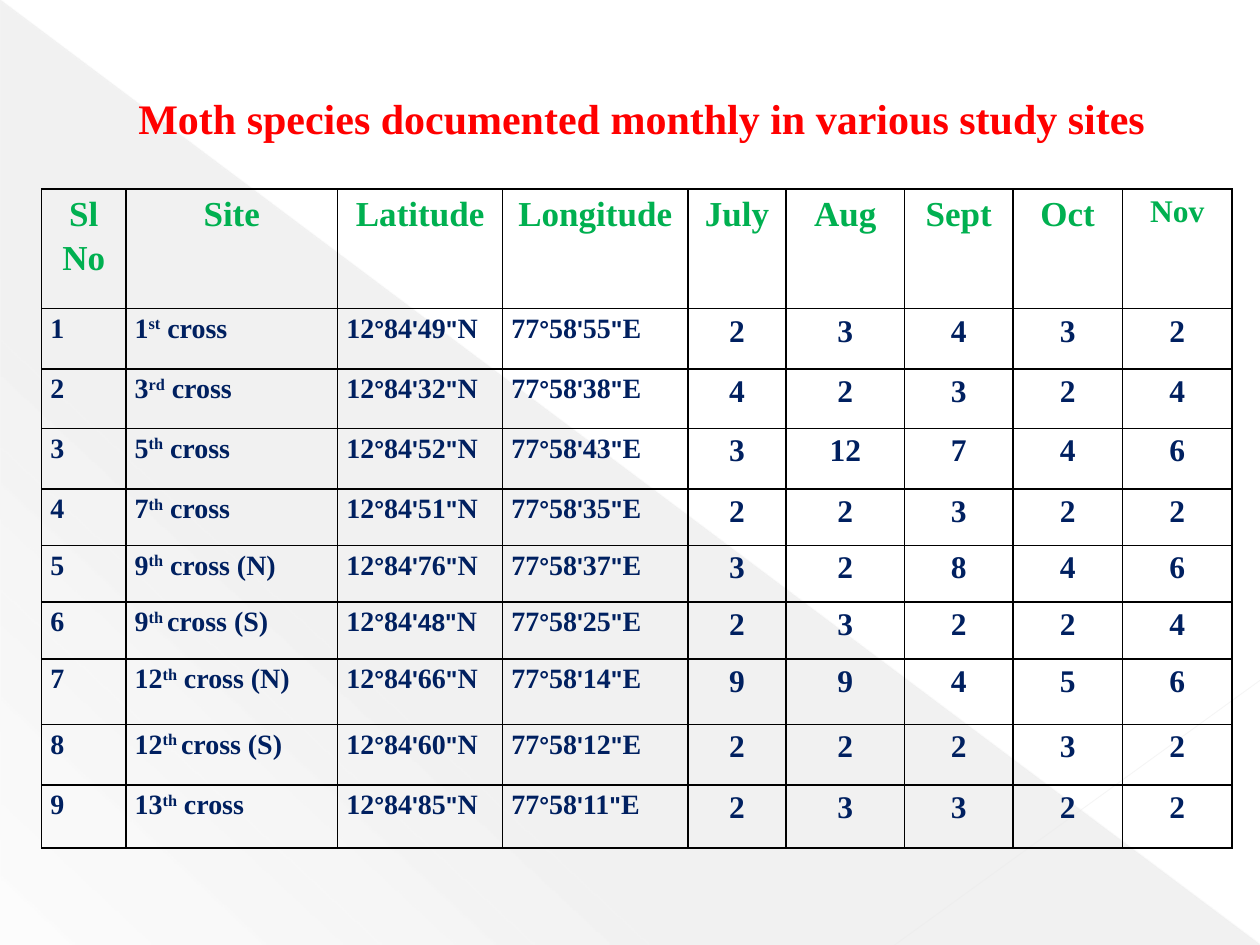
from lxml.etree import SubElement
from pptx import Presentation
from pptx.dml.color import RGBColor
from pptx.enum.shapes import MSO_CONNECTOR as Connector, MSO_SHAPE as Shape
from pptx.enum.text import MSO_ANCHOR as Anchor, MSO_AUTO_SIZE as AutoSize, PP_ALIGN as Align
from pptx.oxml import parse_xml
from pptx.oxml.ns import nsdecls, qn
from pptx.util import Inches, Pt

WIDTH, HEIGHT = 10, 7.5
COLORS = {"title": "FF0000", "header": "00B050", "body": "002060", "border": "000000",
          "shade": "666666", "diagonal": "E8E8E8", "corner": "EAEAEA"}
SERIF, SANS = "Times New Roman", "Arial"
COLUMNS = [0.67, 1.68, 1.31, 1.47, 0.78, 0.94, 0.86, 0.87, 0.87]
ROWS = [0.95, 0.48, 0.47, 0.48, 0.45, 0.45, 0.45, 0.52, 0.48, 0.5]
HEADERS = ["Sl No", "Site", "Latitude", "Longitude", "July", "Aug", "Sept", "Oct", "Nov"]


def seconds(value):
    """Split the seconds of a coordinate into mark, number and mark."""
    return "'", value, '"'


SITES = [
    (("1", "st", " cross"), seconds("49"), seconds("55"), [2, 3, 4, 3, 2]),
    (("3", "rd", " cross"), seconds("32"), seconds("38"), [4, 2, 3, 2, 4]),
    (("5", "th", " cross"), seconds("52"), seconds("43"), [3, 12, 7, 4, 6]),
    (("7", "th", " cross"), seconds("51"), seconds("35"), [2, 2, 3, 2, 2]),
    (("9", "th", " cross (N)"), seconds("76"), seconds("37"), [3, 2, 8, 4, 6]),
    (("9", "th ", "cross (S)"), ("'48\"",), seconds("25"), [2, 3, 2, 2, 4]),
    (("12", "th", " cross (N)"), seconds("66"), seconds("14"), [9, 9, 4, 5, 6]),
    (("12", "th ", "cross (S)"), seconds("60"), seconds("12"), [2, 2, 2, 3, 2]),
    (("13", "th", " cross"), seconds("85"), seconds("11"), [2, 3, 3, 2, 2]),
]


def place(*shares):
    """Turn alternating horizontal and vertical slide shares into lengths."""
    return [Inches(share * (HEIGHT if index % 2 else WIDTH)) for index, share in enumerate(shares)]


def style_run(run, size, color, font=SERIF):
    """Give a run its bold font, size and colour."""
    run.font.name, run.font.size, run.font.bold = font, Pt(size), True
    run.font.color.rgb = RGBColor.from_string(COLORS[color])


def add_shade(slide):
    """Add the translucent gradient triangle of the background."""
    shape = slide.shapes.add_shape(Shape.RIGHT_TRIANGLE, *place(0, 0, 1, 1))
    shape.shadow.inherit = False
    shape.line.fill.background()
    stops = "".join(
        f'<a:gs pos="{position}000"><a:srgbClr val="{COLORS["shade"]}">'
        f'<a:alpha val="{alpha}000"/></a:srgbClr></a:gs>'
        for position, alpha in [(0, 10), (70, 8), (100, 1)])
    gradient = parse_xml(f'<a:gradFill {nsdecls("a")} rotWithShape="1"><a:gsLst>{stops}</a:gsLst>'
                         f'<a:lin ang="{133 * 60000}" scaled="0"/></a:gradFill>')
    shape.element.spPr.find(qn("a:prstGeom")).addnext(gradient)


def add_line(slide, ends, color, width, alpha):
    """Add a thin translucent background line."""
    line = slide.shapes.add_connector(Connector.STRAIGHT, *place(*ends))
    line.line.color.rgb = RGBColor.from_string(COLORS[color])
    line.line.width = Pt(width)
    properties = line.element.spPr
    SubElement(next(properties.iter(qn("a:srgbClr"))), qn("a:alpha"), val=str(alpha * 1000))
    SubElement(properties, qn("a:effectLst"))


def add_title(slide, text):
    """Add the slide heading."""
    text_frame = slide.shapes.add_textbox(*place(0.1, 0.09, 0.84, 0.07)).text_frame
    text_frame.word_wrap = False
    text_frame.auto_size = AutoSize.SHAPE_TO_FIT_TEXT
    text_frame.vertical_anchor = Anchor.MIDDLE
    text_frame.text = text
    style_run(text_frame.paragraphs[0].runs[0], 24, "title")


def add_borders(cell):
    """Draw the four borders of a cell."""
    properties = cell._tc.get_or_add_tcPr()
    for index, side in enumerate("LRTB"):
        properties.insert(index, parse_xml(
            f'<a:ln{side} {nsdecls("a")} w="{Pt(1)}"><a:solidFill>'
            f'<a:srgbClr val="{COLORS["border"]}"/></a:solidFill></a:ln{side}>'))


def fill_cell(cell, parts, size, color, alignment):
    """Write each part as a run of the cell and return the runs."""
    cell.fill.background()
    add_borders(cell)
    cell.margin_left = cell.margin_right = Inches(0.07)
    cell.margin_top = cell.margin_bottom = 0
    paragraph = cell.text_frame.paragraphs[0]
    paragraph.alignment = alignment
    paragraph.line_spacing = 1.15
    for part in parts:
        run = paragraph.add_run()
        run.text = part
        style_run(run, size, color)
    return paragraph.runs


def fill_site_row(cells, number, site, latitude, longitude, counts):
    """Fill the row of one study site."""
    fill_cell(cells[0], [str(number)], 16, "body", Align.LEFT)
    ordinal = fill_cell(cells[1], site, 16, "body", Align.LEFT)[1]
    ordinal.font._element.set("baseline", "30000")
    coordinates = [("12", "°", "84", *latitude, "N"), ("77", "°", "58", *longitude, "E")]
    for cell, coordinate in zip(cells[2:4], coordinates):
        for mark in fill_cell(cell, coordinate, 16, "body", Align.LEFT)[1::2]:
            style_run(mark, 14, "body", SANS)
    for cell, count in zip(cells[4:], counts):
        fill_cell(cell, [str(count)], 18, "body", Align.CENTER)


def add_species_table(slide):
    """Add the table of monthly counts per site."""
    left, top = Inches(0.33), Inches(1.5)
    table = slide.shapes.add_table(len(ROWS), len(COLUMNS), left, top,
                                   Inches(sum(COLUMNS)), Inches(sum(ROWS))).table
    table.first_row = table.horz_banding = False
    for column, width in zip(table.columns, COLUMNS):
        column.width = Inches(width)
    for row, height in zip(table.rows, ROWS):
        row.height = Inches(height)
    for index, header in enumerate(HEADERS):
        size = 18 if header == "Nov" else 20
        fill_cell(table.cell(0, index), [header], size, "header", Align.CENTER)
    for number, site in enumerate(SITES, start=1):
        fill_site_row(list(table.rows[number].cells), number, *site)


def main():
    """Build and save the slide."""
    presentation = Presentation()
    presentation.slide_width, presentation.slide_height = place(1, 1)
    slide = presentation.slides.add_slide(presentation.slide_layouts[6])
    add_shade(slide)
    add_line(slide, (0, 0, 1, 1), "diagonal", 0.39, 35)
    add_line(slide, (1, 0.72, 0.71, 1), "corner", 0.47, 45)
    add_title(slide, "Moth species documented monthly in various study sites")
    add_species_table(slide)
    presentation.save("out.pptx")


if __name__ == "__main__":
    main()
